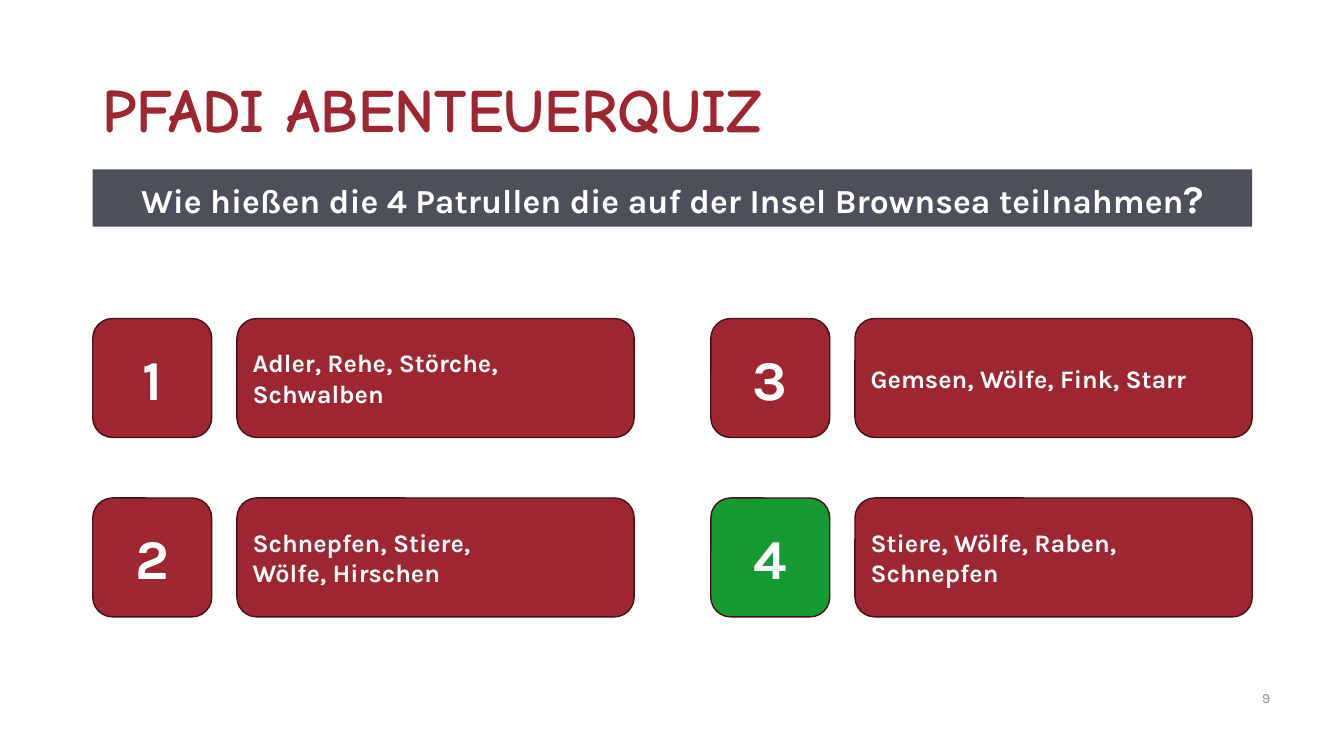
import dataclasses

import pptx
import pptx.dml.color
import pptx.enum.shapes
import pptx.enum.text
import pptx.presentation
import pptx.shapes.autoshape
import pptx.slide
import pptx.text.text
import pptx.util

Inches = pptx.util.Inches
Align = pptx.enum.text.PP_ALIGN
Anchor = pptx.enum.text.MSO_ANCHOR
Preset = pptx.enum.shapes.MSO_SHAPE


@dataclasses.dataclass(frozen=True)
class Theme:
    heading_font: str = "Comic Neue"
    body_font: str = "Karla"
    red: str = "9D2632"
    outline: str = "451116"
    green: str = "159A34"
    slate: str = "4D4F5A"
    white: str = "FFFFFF"
    gray: str = "8C8C8C"
    title_size: int = 44
    number_size: int = 40
    question_mark_size: int = 28
    question_size: int = 24
    answer_size: int = 18
    page_size: int = 10


@dataclasses.dataclass(frozen=True)
class Answer:
    number: int
    text: str
    correct: bool = False


THEME = Theme()
QUESTION = "Wie hießen die 4 Patrullen die auf der Insel Brownsea teilnahmen"
ANSWERS = [
    Answer(1, "Adler, Rehe, Störche, Schwalben"),
    Answer(2, "Schnepfen, Stiere,\nWölfe, Hirschen"),
    Answer(3, "Gemsen, Wölfe, Fink, Starr"),
    Answer(4, "Stiere, Wölfe, Raben, Schnepfen", correct=True),
]
LEFT, WIDTH = 0.92, 11.5
GRID_TOP, ROW_STEP, COLUMN_STEP = 3.16, 1.78, 6.13
TILE, ANSWER_OFFSET, ANSWER_WIDTH = 1.18, 1.43, 3.94
ROWS = 2


def rgb(color: str) -> pptx.dml.color.RGBColor:
    return pptx.dml.color.RGBColor.from_string(color)


def style_text(
    frame: pptx.text.text.TextFrame,
    size: int,
    color: str,
    font: str = THEME.body_font,
    bold: bool = True,
    align: Align = Align.LEFT,
    anchor: Anchor = Anchor.MIDDLE,
) -> None:
    frame.word_wrap = True
    frame.vertical_anchor = anchor
    for para in frame.paragraphs:
        para.alignment = align
        for span in para.runs:
            span.font.name = font
            span.font.size = pptx.util.Pt(size)
            span.font.bold = bold
            span.font.color.rgb = rgb(color)


def add_box(
    page: pptx.slide.Slide, preset: Preset, left: float, top: float,
    width: float, height: float, fill: str, text: str,
) -> pptx.shapes.autoshape.Shape:
    box = page.shapes.add_shape(
        preset, Inches(left), Inches(top), Inches(width), Inches(height)
    )
    box.shadow.inherit = False
    box.fill.solid()
    box.fill.fore_color.rgb = rgb(fill)
    box.text_frame.text = text
    return box


def add_title(page: pptx.slide.Slide) -> None:
    title = page.shapes.title
    title.left, title.top = Inches(LEFT), Inches(0.39)
    title.width, title.height = Inches(WIDTH), Inches(1.45)
    title.text_frame.text = "PFADI ABENTEUERQUIZ"
    title.text_frame.paragraphs[0].line_spacing = 0.9
    style_text(title.text_frame, THEME.title_size, THEME.red, THEME.heading_font)


def add_page_number(page: pptx.slide.Slide) -> None:
    box = page.shapes.add_textbox(
        Inches(LEFT + WIDTH), Inches(6.72), Inches(0.92), Inches(0.4)
    )
    box.text_frame.text = "9"
    style_text(box.text_frame, THEME.page_size, THEME.gray, bold=False)


def add_question(page: pptx.slide.Slide) -> None:
    bar = add_box(
        page, Preset.RECTANGLE, LEFT, 1.68, WIDTH, 0.57, THEME.slate, QUESTION
    )
    bar.line.fill.background()
    mark = bar.text_frame.paragraphs[0].add_run()
    mark.text = "?"
    style_text(
        bar.text_frame, THEME.question_size, THEME.white,
        align=Align.CENTER, anchor=Anchor.TOP,
    )
    mark.font.size = pptx.util.Pt(THEME.question_mark_size)


def add_tile(
    page: pptx.slide.Slide, left: float, top: float, width: float,
    fill: str, text: str, size: int, align: Align,
) -> None:
    tile = add_box(
        page, Preset.ROUNDED_RECTANGLE, left, top, width, TILE, fill, text
    )
    tile.line.color.rgb = rgb(THEME.outline)
    tile.line.width = pptx.util.Pt(1)
    style_text(tile.text_frame, size, THEME.white, align=align)


def add_answer(page: pptx.slide.Slide, index: int, answer: Answer) -> None:
    column, row = divmod(index, ROWS)
    left = LEFT + column * COLUMN_STEP
    top = GRID_TOP + row * ROW_STEP
    number_fill = THEME.green if answer.correct else THEME.red
    add_tile(
        page, left, top, TILE, number_fill, str(answer.number),
        THEME.number_size, Align.CENTER,
    )
    add_tile(
        page, left + ANSWER_OFFSET, top, ANSWER_WIDTH, THEME.red, answer.text,
        THEME.answer_size, Align.LEFT,
    )


def main() -> None:
    deck = pptx.Presentation()
    deck.slide_width, deck.slide_height = Inches(13.33), Inches(7.5)
    page = deck.slides.add_slide(deck.slide_layouts.get_by_name("Title Only"))
    add_title(page)
    add_page_number(page)
    add_question(page)
    for index, answer in enumerate(ANSWERS):
        add_answer(page, index, answer)
    deck.save("out.pptx")


if __name__ == "__main__":
    main()
